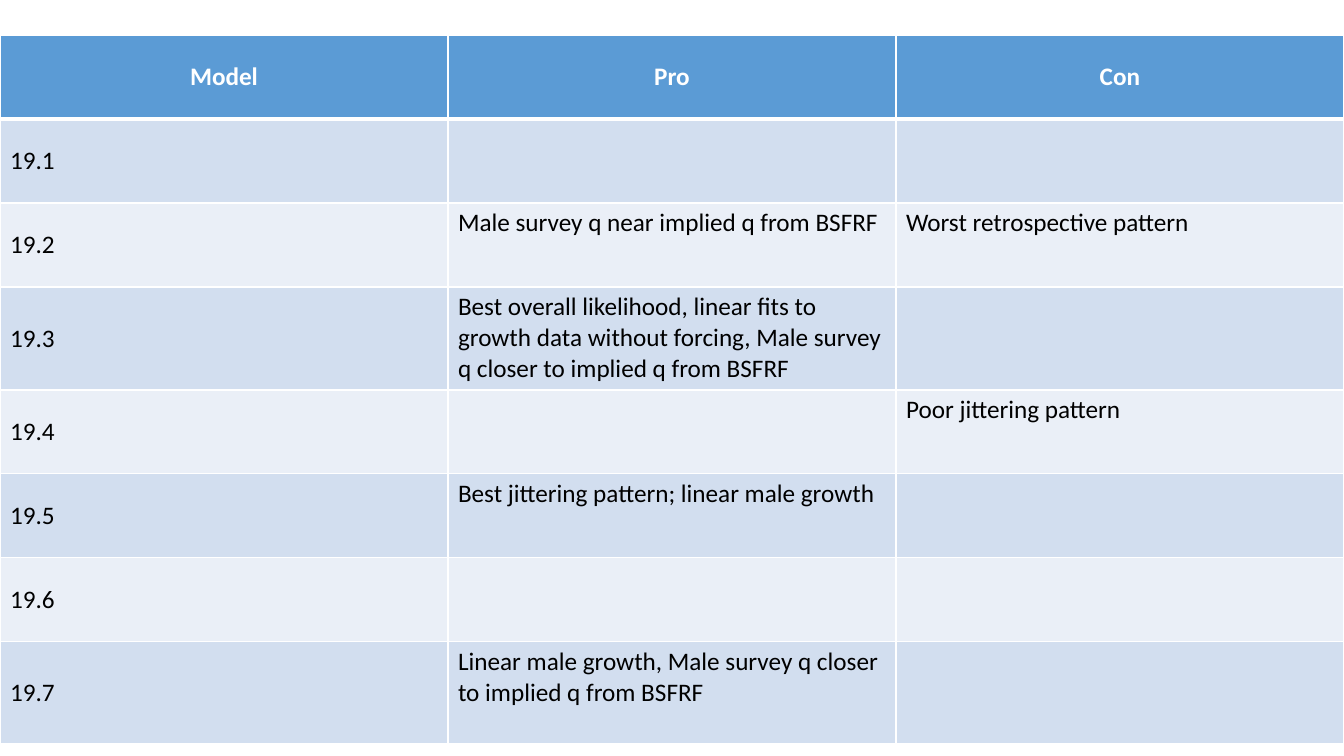
from lxml import etree
from pptx import Presentation
from pptx import util as u
from pptx.dml.color import RGBColor
from pptx.enum import text
from pptx.oxml.ns import qn

PX = u.Inches(1) / 100.8
COLORS = {"header": "5B9BD5", "odd": "D2DEEF", "even": "EAEFF7", "white": "FFFFFF", "black": "000000"}
HEADINGS = ("Model", "Pro", "Con")
MODELS = [
    ("19.1", "", ""),
    ("19.2", "Male survey q near implied q from BSFRF", "Worst retrospective pattern"),
    ("19.3", "Best overall likelihood, linear fits to growth data without forcing, "
             "Male survey q closer to implied q from BSFRF", ""),
    ("19.4", "", "Poor jittering pattern"),
    ("19.5", "Best jittering pattern; linear male growth", ""),
    ("19.6", "", ""),
    ("19.7", "Linear male growth, Male survey q closer to implied q from BSFRF", ""),
]
ROW_HEIGHTS = [84, 84, 84, 103, 84, 84, 84, 102]


def px(length):
    return u.Emu(round(length * PX))


def write_cell(cell, words, fill, color="black", bold=False, centered=False, middle=False, bottom=1):
    cell.vertical_anchor = text.MSO_ANCHOR.MIDDLE if middle else text.MSO_ANCHOR.TOP
    para = cell.text_frame.paragraphs[0]
    para.alignment = text.PP_ALIGN.CENTER if centered else text.PP_ALIGN.LEFT
    if words:
        span = para.add_run()
        span.text = words
        span.font.name = "Calibri"
        span.font.size = u.Pt(18)
        span.font.bold = bold
        span.font.color.rgb = RGBColor.from_string(COLORS[color])
    properties = cell._tc.get_or_add_tcPr()
    for side, points in (("lnL", 1), ("lnR", 1), ("lnT", 1), ("lnB", bottom)):
        border = etree.SubElement(properties, qn(f"a:{side}"), w=str(u.Pt(points)))
        solid = etree.SubElement(border, qn("a:solidFill"))
        etree.SubElement(solid, qn("a:srgbClr"), val=COLORS["white"])
    cell.fill.solid()
    cell.fill.fore_color.rgb = RGBColor.from_string(COLORS[fill])


deck = Presentation()
deck.slide_width, deck.slide_height = px(1344), px(756)
page = deck.slides.add_slide(deck.slide_layouts[6])

table = page.shapes.add_table(
    len(MODELS) + 1, len(HEADINGS), px(0), px(35), px(1344), px(sum(ROW_HEIGHTS))
).table
for column in table.columns:
    column.width = px(448)
for row, height in zip(table.rows, ROW_HEIGHTS):
    row.height = px(height)

for column, heading in enumerate(HEADINGS):
    write_cell(table.cell(0, column), heading, "header", color="white",
               bold=True, centered=True, middle=True, bottom=3)
for row, model in enumerate(MODELS, start=1):
    for column, words in enumerate(model):
        write_cell(table.cell(row, column), words, "odd" if row % 2 else "even", middle=column == 0)
    if row == 1:
        for column in range(len(HEADINGS)):
            top = table.cell(row, column)._tc.tcPr.find(qn("a:lnT"))
            top.set("w", str(u.Pt(3)))

deck.save("out.pptx")
